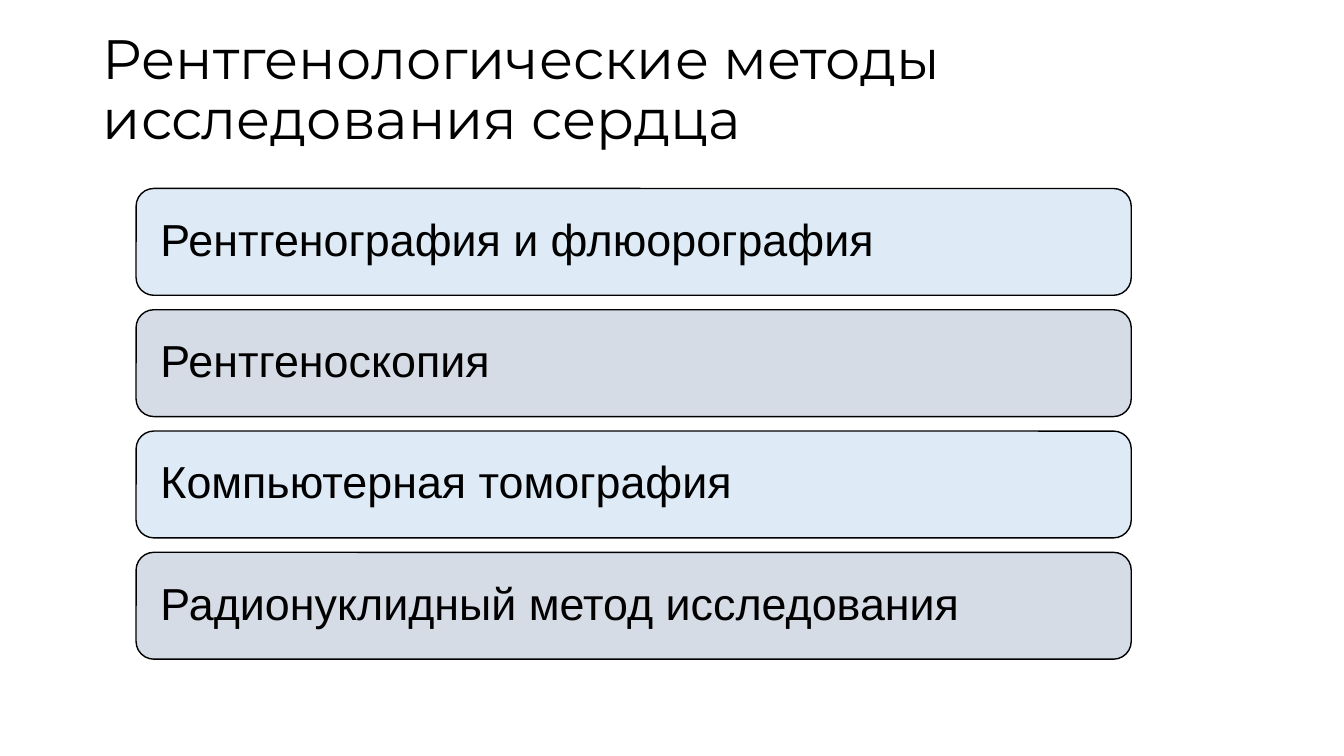
from dataclasses import dataclass

from pptx import Presentation
from pptx.dml.color import RGBColor
from pptx.enum.shapes import MSO_SHAPE as Shape
from pptx.enum.text import MSO_ANCHOR as Anchor, PP_ALIGN as Align
from pptx.util import Inches, Pt


@dataclass(frozen=True)
class Theme:
    title_font: str = "Montserrat"
    body_font: str = "Arial"
    title_size: float = 39.6
    body_size: float = 32
    ink: str = "000000"
    bands: tuple = ("DEEBF7", "D6DCE5")


TITLE = "Рентгенологические методы исследования сердца"
METHODS = [
    "Рентгенография и флюорография",
    "Рентгеноскопия",
    "Компьютерная томография",
    "Радионуклидный метод исследования",
]
FIRST_TOP, LAST_TOP = 1.87, 5.48


class Deck:
    def __init__(self, theme):
        self.theme = theme
        self.prs = Presentation()
        self.prs.slide_width = Inches(13.33)
        self.prs.slide_height = Inches(7.5)
        self.s = self.prs.slides.add_slide(self.prs.slide_layouts[5])

    def set_text(self, tf, text, font, size):
        """Fill a frame with one left-aligned, vertically centred paragraph."""
        tf.word_wrap = True
        tf.vertical_anchor = Anchor.MIDDLE
        p = tf.paragraphs[0]
        p.alignment = Align.LEFT
        p.line_spacing = 0.9
        r = p.add_run()
        r.text = text
        r.font.name = font
        r.font.size = Pt(size)
        r.font.color.rgb = RGBColor.from_string(self.theme.ink)

    def title(self, text, left, top, width, height):
        sp = self.s.shapes.title
        sp.left, sp.top = Inches(left), Inches(top)
        sp.width, sp.height = Inches(width), Inches(height)
        self.set_text(sp.text_frame, text, self.theme.title_font, self.theme.title_size)

    def band(self, text, fill, left, top, width, height):
        sp = self.s.shapes.add_shape(
            Shape.ROUNDED_RECTANGLE,
            Inches(left), Inches(top), Inches(width), Inches(height))
        sp.shadow.inherit = False
        sp.fill.solid()
        sp.fill.fore_color.rgb = RGBColor.from_string(fill)
        sp.line.color.rgb = RGBColor.from_string(self.theme.ink)
        sp.line.width = Pt(1)
        tf = sp.text_frame
        tf.margin_left = tf.margin_right = Inches(0.19)
        self.set_text(tf, text, self.theme.body_font, self.theme.body_size)


def main():
    theme = Theme()
    deck = Deck(theme)
    deck.title(TITLE, 0.92, 0.56, 11.5, 0.7)
    pitch = (LAST_TOP - FIRST_TOP) / (len(METHODS) - 1)
    for i, method in enumerate(METHODS):
        fill = theme.bands[i % len(theme.bands)]
        deck.band(method, fill, 1.35, FIRST_TOP + i * pitch, 9.87, 1.06)
    deck.prs.save("out.pptx")


if __name__ == "__main__":
    main()
